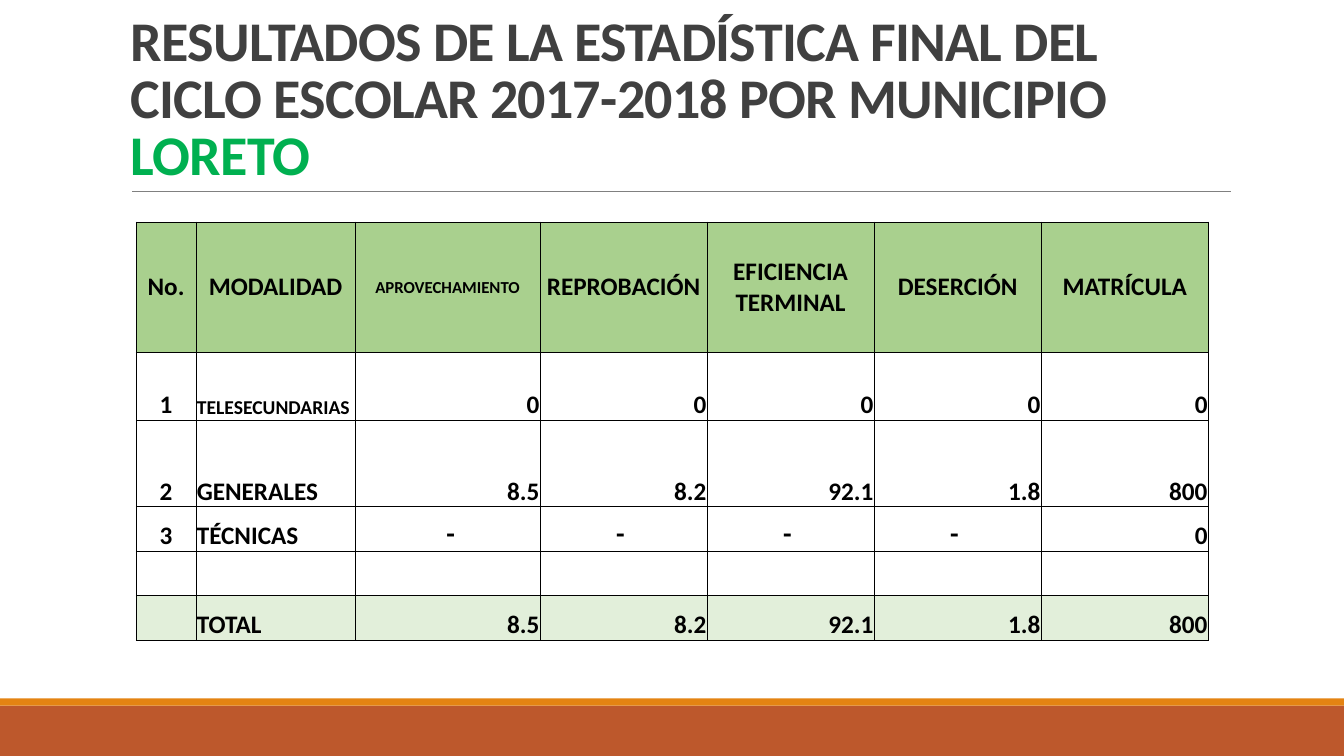
from lxml.etree import SubElement
from pptx import Presentation
from pptx.dml.color import RGBColor
from pptx.enum.shapes import MSO_CONNECTOR, MSO_SHAPE
from pptx.enum.text import MSO_ANCHOR, PP_ALIGN
from pptx.oxml.ns import qn
from pptx.util import Cm, Pt

WIDE, HIGH = 33.87, 19.05
TITLE = [
    ("RESULTADOS DE LA ESTADÍSTICA FINAL DEL CICLO ESCOLAR 2017-2018 POR MUNICIPIO ", "404040"),
    ("LORETO", "00B050"),
]
BARS = [(17.78, 1.27, "BD582C"), (17.6, 0.18, "E48312")]
ROWS = [
    ("No.", "MODALIDAD", "APROVECHAMIENTO", "REPROBACIÓN",
     "EFICIENCIA TERMINAL", "DESERCIÓN", "MATRÍCULA"),
    ("1", "TELESECUNDARIAS", "0", "0", "0", "0", "0"),
    ("2", "GENERALES", "8.5", "8.2", "92.1", "1.8", "800"),
    ("3", "TÉCNICAS", " -", "- ", "- ", "- ", "0"),
    ("",) * 7,
    ("", "TOTAL", "8.5", "8.2", "92.1", "1.8", "800"),
]
COLS = [1.51, 4.01, 4.66] + [4.21] * 4
TALL = [3.28, 1.71, 2.19] + [1.12] * 3
FILLS = {0: "A9D08E", len(ROWS) - 1: "E2EFDA"}
SIZES = {"APROVECHAMIENTO": 12, "TELESECUNDARIAS": 14, "-": 20}


def paint(fill, tone):
    """Fill a shape, cell, line or font with a hex colour."""
    fill.solid()
    fill.fore_color.rgb = RGBColor.from_string(tone)


def write(para, text, size=18, tone="000000", space=None):
    """Add a bold run of text to a paragraph."""
    run = para.add_run()
    run.text = text
    run.font.name, run.font.size, run.font.bold = "Calibri", Pt(size), True
    paint(run.font.fill, tone)
    if space is not None:
        run.font._element.set("spc", str(space))


def edge(cell):
    """Draw thin black borders around a cell."""
    props = cell._tc.get_or_add_tcPr()
    for side in ("a:lnL", "a:lnR", "a:lnT", "a:lnB"):
        line = SubElement(props, qn(side), w=str(Pt(0.5)))
        fill = SubElement(line, qn("a:solidFill"))
        SubElement(fill, qn("a:srgbClr"), val="000000")


def place(row, col, text):
    """Return the alignment of a table cell."""
    if row == 0 or col == 0 or "-" in text:
        return PP_ALIGN.CENTER
    return PP_ALIGN.LEFT if col == 1 else PP_ALIGN.RIGHT


def draw_frame(slide):
    """Draw the bottom bars, the rule and the title."""
    for top, tall, tone in BARS:
        bar = slide.shapes.add_shape(MSO_SHAPE.RECTANGLE, 0, Cm(top), Cm(WIDE), Cm(tall))
        bar.shadow.inherit = False
        paint(bar.fill, tone)
        bar.line.fill.background()
    rule = slide.shapes.add_connector(
        MSO_CONNECTOR.STRAIGHT, Cm(3.33), Cm(4.83), Cm(31.01), Cm(4.83))
    paint(rule.line.fill, "808080")
    rule.line.width = Pt(0.5)
    SubElement(rule._element.spPr, qn("a:effectLst"))
    box = slide.shapes.add_textbox(Cm(3.05), Cm(0.79), Cm(27.94), Cm(4.04))
    frame = box.text_frame
    frame.word_wrap = True
    frame.vertical_anchor = MSO_ANCHOR.BOTTOM
    para = frame.paragraphs[0]
    para.line_spacing = 0.85
    for text, tone in TITLE:
        write(para, text, size=40, tone=tone, space=-50)


def draw_table(slide):
    """Draw the table of results."""
    table = slide.shapes.add_table(
        len(ROWS), len(COLS), Cm(3.43), Cm(5.59), Cm(sum(COLS)), Cm(sum(TALL))).table
    table.first_row = table.horz_banding = False
    for col, wide in zip(table.columns, COLS):
        col.width = Cm(wide)
    for r, row in enumerate(ROWS):
        table.rows[r].height = Cm(TALL[r])
        for c, text in enumerate(row):
            cell = table.cell(r, c)
            edge(cell)
            if r in FILLS:
                paint(cell.fill, FILLS[r])
            else:
                cell.fill.background()
            cell.margin_left = cell.margin_right = cell.margin_top = Cm(0.02)
            cell.margin_bottom = 0
            cell.vertical_anchor = MSO_ANCHOR.BOTTOM if r else MSO_ANCHOR.MIDDLE
            if text:
                para = cell.text_frame.paragraphs[0]
                para.alignment = place(r, c, text)
                write(para, text, size=SIZES.get(text.strip(), 18))


def main():
    """Build and save the slide."""
    deck = Presentation()
    deck.slide_width, deck.slide_height = Cm(WIDE), Cm(HIGH)
    slide = deck.slides.add_slide(deck.slide_layouts[6])
    paint(slide.background.fill, "FFFFFF")
    draw_frame(slide)
    draw_table(slide)
    deck.save("out.pptx")


if __name__ == "__main__":
    main()
